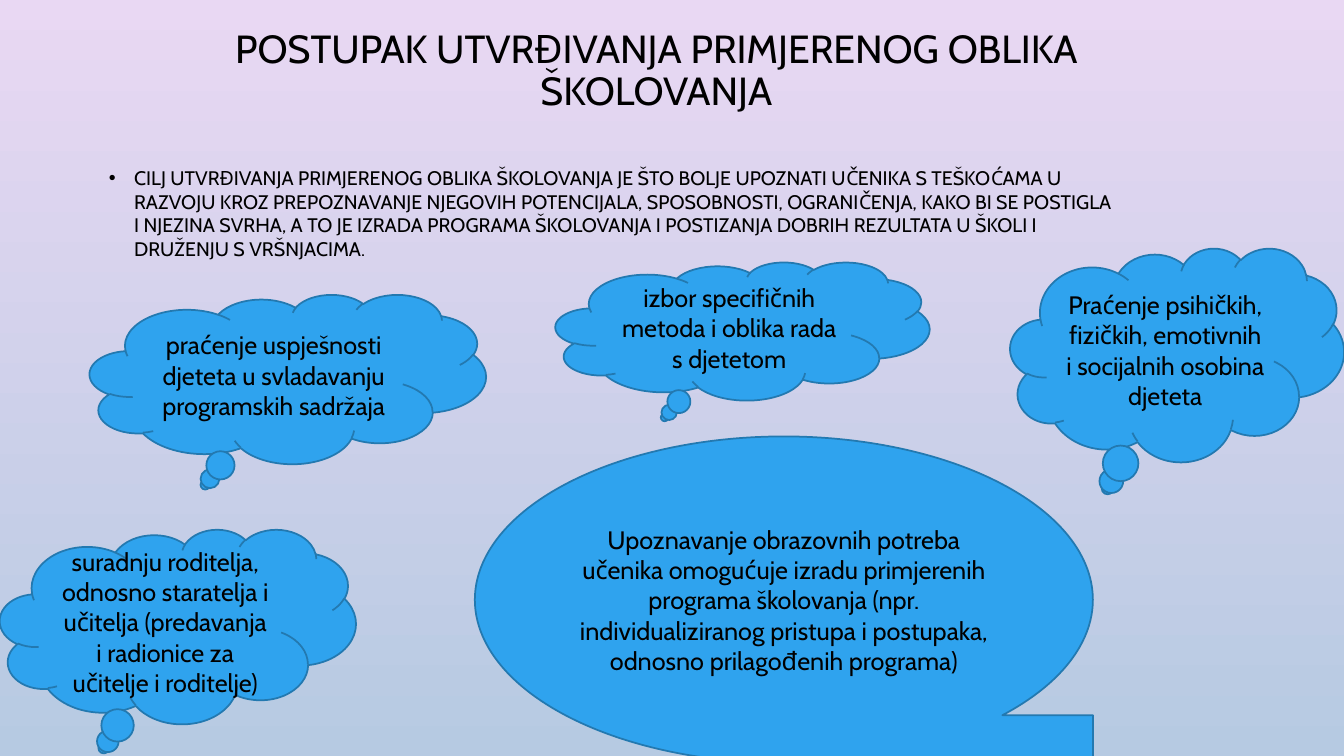
from pptx import Presentation
from pptx.dml.color import RGBColor
from pptx.enum.shapes import MSO_SHAPE
from pptx.enum.text import MSO_ANCHOR, MSO_AUTO_SIZE, PP_ALIGN
from pptx.util import Inches, Pt

TITLE = "POSTUPAK UTVRĐIVANJA PRIMJERENOG OBLIKA ŠKOLOVANJA"
GOAL = (
    "CILJ UTVRĐIVANJA PRIMJERENOG OBLIKA ŠKOLOVANJA JE ŠTO BOLJE UPOZNATI "
    "UČENIKA S TEŠKOĆAMA U RAZVOJU KROZ PREPOZNAVANJE NJEGOVIH POTENCIJALA, "
    "SPOSOBNOSTI, OGRANIČENJA, KAKO BI SE POSTIGLA I NJEZINA SVRHA, A TO JE "
    "IZRADA PROGRAMA ŠKOLOVANJA I POSTIZANJA DOBRIH REZULTATA U ŠKOLI I "
    "DRUŽENJU S VRŠNJACIMA."
)
CLOUD = MSO_SHAPE.CLOUD_CALLOUT
BUBBLE = MSO_SHAPE.FLOWCHART_SEQUENTIAL_ACCESS_STORAGE
# kind, (left, top, width, height), text
CALLOUTS = [
    (CLOUD, (0.89, 2.92, 3.93, 1.68),
     "praćenje uspješnosti djeteta u svladavanju programskih sadržaja"),
    (CLOUD, (5.51, 2.6, 3.71, 1.37),
     "izbor specifičnih metoda i oblika rada s djetetom"),
    (CLOUD, (0, 5.25, 3.53, 1.93),
     "suradnju roditelja, odnosno staratelja i učitelja "
     "(predavanja i radionice za učitelje i roditelje)"),
    (CLOUD, (10.02, 2.46, 3.31, 2.12),
     "Praćenje psihičkih, fizičkih, emotivnih i socijalnih osobina djeteta"),
    (BUBBLE, (4.71, 4.33, 6.13, 3.24),
     "Upoznavanje obrazovnih potreba učenika omogućuje izradu primjerenih "
     "programa školovanja (npr. individualiziranog pristupa i postupaka, "
     "odnosno prilagođenih programa)"),
]


def color(value):
    return RGBColor.from_string(value)


def place(shape, box):
    shape.left, shape.top, shape.width, shape.height = map(Inches, box)


def write(shape, text, size, align, anchor):
    frame = shape.text_frame
    frame.text = text
    frame.word_wrap = True
    frame.auto_size = MSO_AUTO_SIZE.NONE
    frame.vertical_anchor = anchor
    paragraph = frame.paragraphs[0]
    paragraph.alignment = align
    paragraph.space_before = Pt(0)
    paragraph.font.name = "Cabin"
    paragraph.font.size = Pt(size)
    paragraph.font.color.rgb = color("000000")
    return paragraph


def add_callout(slide, kind, box, text):
    shape = slide.shapes.add_shape(kind, *map(Inches, box))
    shape.shadow.inherit = False
    shape.fill.solid()
    shape.fill.fore_color.rgb = color("2FA3EE")
    shape.line.color.rgb = color("2379B0")
    shape.line.width = Pt(1.25)
    write(shape, text, 18, PP_ALIGN.CENTER, MSO_ANCHOR.MIDDLE)


def main():
    presentation = Presentation()
    presentation.slide_width = Inches(13.33)
    presentation.slide_height = Inches(7.5)
    slide = presentation.slides.add_slide(presentation.slide_layouts[1])

    background = slide.background.fill
    background.gradient()
    background.gradient_angle = 270
    for stop, value in zip(background.gradient_stops, ("E9D8F3", "B6CAE2")):
        stop.color.rgb = color(value)

    title, body = slide.placeholders
    place(title, (2.18, 0.21, 8.66, 1.01))
    heading = write(title, TITLE, 28, PP_ALIGN.CENTER, MSO_ANCHOR.MIDDLE)
    heading.line_spacing = 0.9

    place(body, (0.98, 1.6, 10.18, 1))
    goal = write(body, GOAL, 14, PP_ALIGN.LEFT, MSO_ANCHOR.TOP)
    properties = goal._p.get_or_add_pPr()
    properties.set("marL", str(Inches(0.25)))
    properties.set("indent", str(Inches(-0.25)))

    for kind, box, text in CALLOUTS:
        add_callout(slide, kind, box, text)

    presentation.save("out.pptx")


if __name__ == "__main__":
    main()
